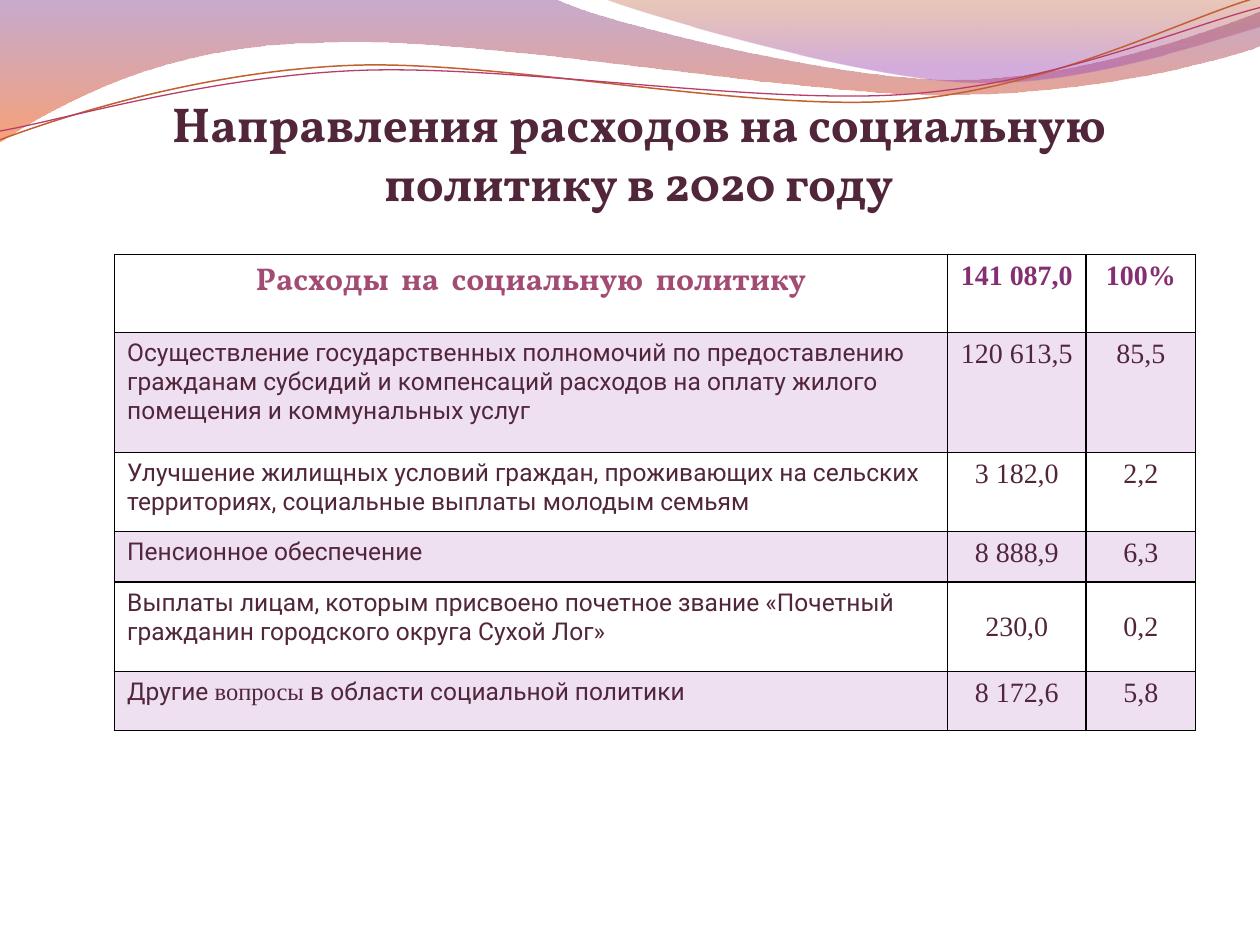
from lxml.etree import SubElement
from pptx import Presentation
from pptx.dml.color import RGBColor
from pptx.enum.text import MSO_ANCHOR as Anchor, PP_ALIGN as Align
from pptx.oxml import parse_xml
from pptx.oxml.ns import nsdecls, qn
from pptx.util import Inches, Pt

COLORS = {
    "text": "51253A", "heading": "A34B73", "total": "852F73",
    "band": "AC66BB", "border": "000000",
    "wave_top": "834591", "wave_bottom": "F35307",
    "crest_top": "B74915", "crest_bottom": "A14BB4",
    "orange_line": "C45F30", "pink_line": "B83D68",
}

prs = Presentation()
prs.slide_width, prs.slide_height = Inches(10), Inches(7.5)
slide = prs.slides.add_slide(prs.slide_layouts[6])


def add_outline(start, segments, closed):
    """Draw a freeform; 2 numbers are a line, 6 numbers a Bezier curve."""
    builder = slide.shapes.build_freeform(Inches(start[0]), Inches(start[1]), scale=1.0)
    builder.add_line_segments(
        [(Inches(seg[-2]), Inches(seg[-1])) for seg in segments], close=closed)
    outline = builder.convert_to_shape()
    outline.shadow.inherit = False
    # Bend the straight segments that have control points
    for straight, seg in zip(list(outline._element.iter(qn("a:lnTo"))), segments):
        if len(seg) == 6:
            curve = parse_xml(f'<a:cubicBezTo {nsdecls("a")}/>')
            for x, y in zip(seg[::2], seg[1::2]):
                SubElement(curve, qn("a:pt"), x=str(Inches(x) - outline.left),
                           y=str(Inches(y) - outline.top))
            straight.getparent().replace(straight, curve)
    return outline


def add_run(paragraph, text, font, size, color, bold=False):
    run = paragraph.add_run()
    run.text = text
    run.font.name, run.font.size, run.font.bold = font, Pt(size), bold
    run.font.color.rgb = RGBColor.from_string(COLORS[color])


# Gradient waves: start, segments, stops (position %, colour, opacity %)
waves = [
    ((0, -0.01),
     [(4.4, -0.01), (4.76, 0.17, 6.64, 0.63, 7.58, 0.63),
      (8.53, 0.63, 9.58, 0.26, 10, 0.09), (10.01, 0.36),
      (9.83, 0.44, 8.7, 0.76, 7.46, 0.75), (6.22, 0.75, 3.82, 0.28, 2.57, 0.34),
      (1.29, 0.35, 0.46, 0.83, -0.01, 1.13), (0, -0.01)],
     [(0, "wave_top", 45), (100, "wave_bottom", 55)]),
    ((4.79, -0.01),
     [(5.09, 0.11, 6.82, 0.62, 7.69, 0.65),
      (8.56, 0.69, 9.61, 0.32, 10, 0.21), (10, 0), (4.79, -0.01)],
     [(0, "crest_top", 30), (80, "crest_bottom", 45)]),
]
for start, segments, stops in waves:
    wave = add_outline(start, segments, True)
    wave.line.fill.background()
    wave.fill.background()
    stop_xml = "".join(
        f'<a:gs pos="{pos * 1000}"><a:srgbClr val="{COLORS[color]}">'
        f'<a:alpha val="{opacity * 1000}"/></a:srgbClr></a:gs>'
        for pos, color, opacity in stops)
    gradient = parse_xml(
        f'<a:gradFill {nsdecls("a")} rotWithShape="1"><a:gsLst>{stop_xml}</a:gsLst>'
        '<a:lin ang="5400000" scaled="0"/></a:gradFill>')
    props = wave._element.spPr
    props.replace(props.find(qn("a:noFill")), gradient)

# Thin wave lines
wave_lines = [
    ((0, 1.11),
     [(0.48, 0.93, 1.58, 0.57, 2.77, 0.52), (3.95, 0.47, 5.93, 0.89, 7.13, 0.8),
      (8.33, 0.71, 9.38, 0.15, 9.98, -0.02)], "orange_line", 0.85),
    ((0, 1.04),
     [(0.47, 0.96, 1.64, 0.61, 2.83, 0.56), (4.03, 0.51, 5.97, 0.83, 7.17, 0.75),
      (8.36, 0.67, 9.41, 0.21, 10, 0.06)], "pink_line", 0.75),
]
for start, segments, color, width in wave_lines:
    wave_line = add_outline(start, segments, False)
    wave_line.fill.background()
    wave_line.line.color.rgb = RGBColor.from_string(COLORS[color])
    wave_line.line.width = Pt(width)

# Title
title = slide.shapes.add_textbox(Inches(0.58), Inches(0.69), Inches(8.98), Inches(1.02))
title.text_frame.word_wrap = True
title.text_frame.vertical_anchor = Anchor.TOP
title_line = title.text_frame.paragraphs[0]
title_line.alignment = Align.CENTER
add_run(title_line, "Направления расходов на социальную политику в 2020 году",
        "Vollkorn", 28, "text", True)

# Expenses table: name, amount, share
expenses = [
    ("Расходы  на  социальную  политику", "141 087,0", "100%"),
    ("Осуществление государственных полномочий по предоставлению гражданам субсидий "
     "и компенсаций расходов на оплату жилого  помещения и коммунальных услуг",
     "120 613,5", "85,5"),
    ("Улучшение жилищных условий граждан, проживающих на сельских территориях, "
     "социальные выплаты молодым семьям", "3 182,0", "2,2"),
    ("Пенсионное обеспечение", "8 888,9", "6,3"),
    ("Выплаты лицам, которым присвоено почетное звание «Почетный гражданин "
     "городского округа Сухой Лог»", "230,0", "0,2"),
    ("Другие |вопросы| в области социальной политики", "8 172,6", "5,8"),
]
HONORARY_ROW = 4
col_widths = [6.61, 1.1, 0.87]
row_heights = [0.62, 0.95, 0.63, 0.4, 0.71, 0.47]
table = slide.shapes.add_table(
    len(expenses), len(col_widths), Inches(0.91), Inches(2.02),
    Inches(sum(col_widths)), Inches(sum(row_heights))).table
for column, width in zip(table.columns, col_widths):
    column.width = Inches(width)
for row, height in zip(table.rows, row_heights):
    row.height = Inches(height)

for r, expense in enumerate(expenses):
    for c, text in enumerate(expense):
        cell = table.cell(r, c)
        paragraph = cell.text_frame.paragraphs[0]
        if r == 0 or c > 0:
            paragraph.alignment = Align.CENTER
        if r == HONORARY_ROW and c > 0:
            cell.vertical_anchor = Anchor.MIDDLE
        if c > 0:
            add_run(paragraph, text, "Times New Roman", 16,
                    "text" if r else "total", r == 0)
        elif r == 0:
            add_run(paragraph, text, "Vollkorn", 18, "heading", True)
        else:
            for i, part in enumerate(text.split("|")):
                add_run(paragraph, part, "Times New Roman" if i % 2 else "Roboto",
                        14, "text")

        # Translucent band on every second row
        cell_props = cell._tc.get_or_add_tcPr()
        if r % 2:
            cell.fill.solid()
            cell.fill.fore_color.rgb = RGBColor.from_string(COLORS["band"])
            band = cell_props.find(qn("a:solidFill")).find(qn("a:srgbClr"))
            SubElement(band, qn("a:alpha"), val="20000")
        else:
            cell.fill.background()

        # Borders come before the fill in the cell properties
        for i, side in enumerate(("lnL", "lnR", "lnT", "lnB")):
            cell_props.insert(i, parse_xml(
                f'<a:{side} {nsdecls("a")} w="{Pt(1)}"><a:solidFill>'
                f'<a:srgbClr val="{COLORS["border"]}"/></a:solidFill></a:{side}>'))

prs.save("out.pptx")
